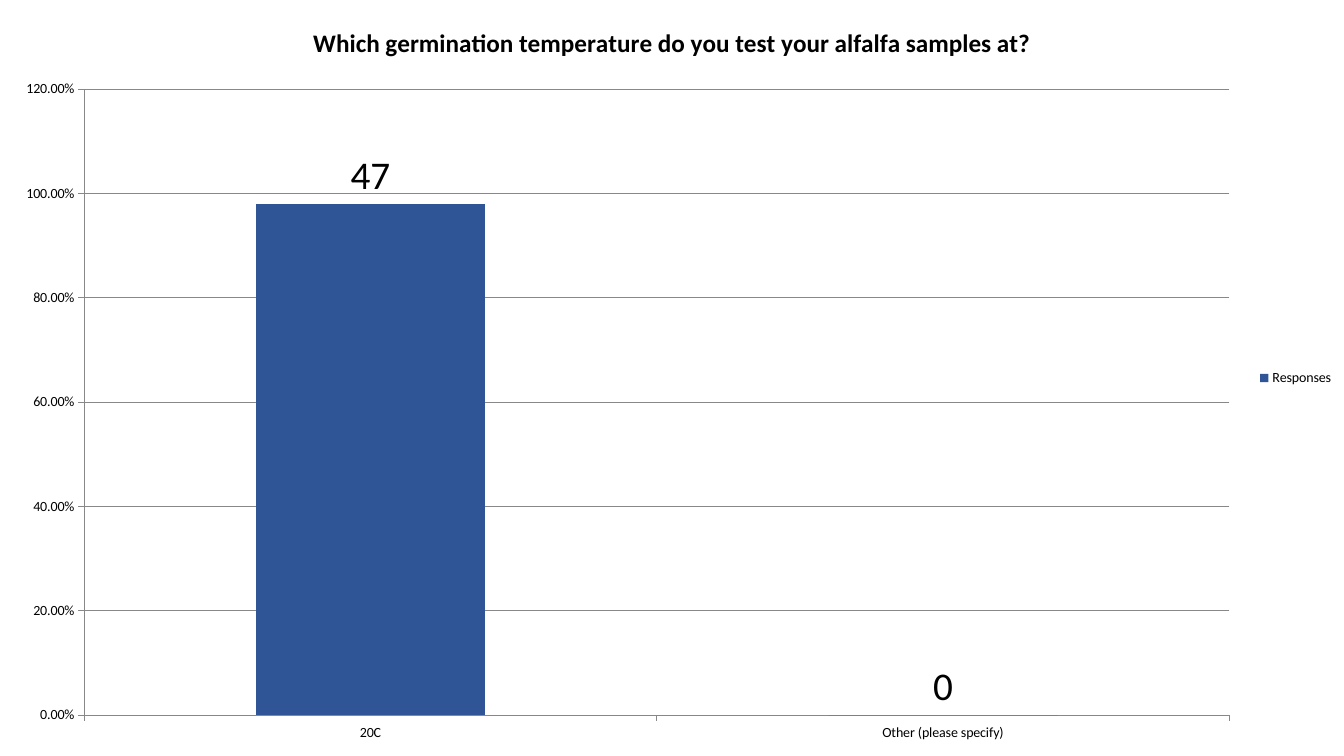
from dataclasses import dataclass

from lxml.etree import SubElement as Sub
from pptx import Presentation
from pptx.chart.data import CategoryChartData as Data
from pptx.dml.color import RGBColor as RGB
from pptx.enum.chart import XL_CHART_TYPE as Kind
from pptx.enum.chart import XL_LABEL_POSITION as Spot
from pptx.enum.chart import XL_LEGEND_POSITION as Side
from pptx.enum.chart import XL_TICK_MARK as Tick
from pptx.oxml.ns import qn
from pptx.util import Cm, Pt


@dataclass(frozen=True)
class Theme:
    font: str = "Calibri"
    ink: RGB = RGB(0, 0, 0)
    bar: RGB = RGB(0x2F, 0x55, 0x97)
    rule: RGB = RGB(0x88, 0x88, 0x88)
    base: Pt = Pt(10)
    title: Pt = Pt(18)
    count: Pt = Pt(28)
    thin: Pt = Pt(0.5)


THEME = Theme()
WIDE, HIGH = Cm(33.87), Cm(19.05)
TITLE = "Which germination temperature do you test your alfalfa samples at?"
NAMES = ("20C", "Other (please specify)")
SHARES = (0.98, 0)
COUNTS = ("47", "0")
PLOT = {"x": Cm(2.12) / WIDE, "y": Cm(2.25) / HIGH,
        "w": Cm(28.86) / WIDE, "h": Cm(15.77) / HIGH}


def style(font, size, bold=False):
    font.name = THEME.font
    font.size = size
    font.bold = bold
    font.color.rgb = THEME.ink


def draw_rule(line):
    line.color.rgb = THEME.rule
    line.width = THEME.thin


def add_bars(slide):
    data = Data(number_format="0.00%")
    data.categories = NAMES
    data.add_series("Responses", SHARES)
    frame = slide.shapes.add_chart(
        Kind.COLUMN_CLUSTERED, 0, 0, WIDE, HIGH, data)
    chart = frame.chart
    style(chart.font, THEME.base)
    plot = chart.plots[0]
    plot.gap_width = 150
    plot.vary_by_categories = False
    fill = plot.series[0].format.fill
    fill.solid()
    fill.fore_color.rgb = THEME.bar
    return chart


def set_title(chart):
    chart.has_title = True
    frame = chart.chart_title.text_frame
    frame.text = TITLE
    style(frame.paragraphs[0].runs[0].font, THEME.title, True)
    chart.chart_title.include_in_layout = False


def set_axes(chart):
    for axis in (chart.category_axis, chart.value_axis):
        axis.major_tick_mark = Tick.OUTSIDE
        axis.minor_tick_mark = Tick.NONE
        draw_rule(axis.format.line)
    scale = chart.value_axis
    scale.minimum_scale, scale.maximum_scale = 0, 1.2
    scale.major_unit = 0.2
    scale.tick_labels.number_format = "0.00%"
    scale.tick_labels.number_format_is_linked = False
    scale.has_major_gridlines = True
    draw_rule(scale.major_gridlines.format.line)


def set_legend(chart):
    chart.has_legend = True
    chart.legend.position = Side.RIGHT
    chart.legend.include_in_layout = False
    style(chart.legend.font, THEME.base)


def set_counts(chart):
    points = chart.plots[0].series[0].points
    for i, count in enumerate(COUNTS):
        label = points[i].data_label
        label.text_frame.text = count
        style(label.text_frame.paragraphs[0].runs[0].font, THEME.count)
        label.position = Spot.OUTSIDE_END


def place_plot(chart):
    # Inner plot area as fractions of the chart
    area = chart.plots[0]._element.getparent()
    for old in area.findall(qn("c:layout")):
        area.remove(old)
    layout = Sub(area, qn("c:layout"))
    area.insert(0, layout)
    box = Sub(layout, qn("c:manualLayout"))
    Sub(box, qn("c:layoutTarget")).set("val", "inner")
    for key in "xy":
        Sub(box, qn(f"c:{key}Mode")).set("val", "edge")
    for key, part in PLOT.items():
        Sub(box, qn(f"c:{key}")).set("val", f"{part:.4f}")


def main():
    deck = Presentation()
    deck.slide_width, deck.slide_height = WIDE, HIGH
    slide = deck.slides.add_slide(deck.slide_layouts[6])

    # Chart and its parts
    chart = add_bars(slide)
    set_title(chart)
    set_axes(chart)
    set_legend(chart)
    set_counts(chart)
    place_plot(chart)

    deck.save("out.pptx")


if __name__ == "__main__":
    main()
